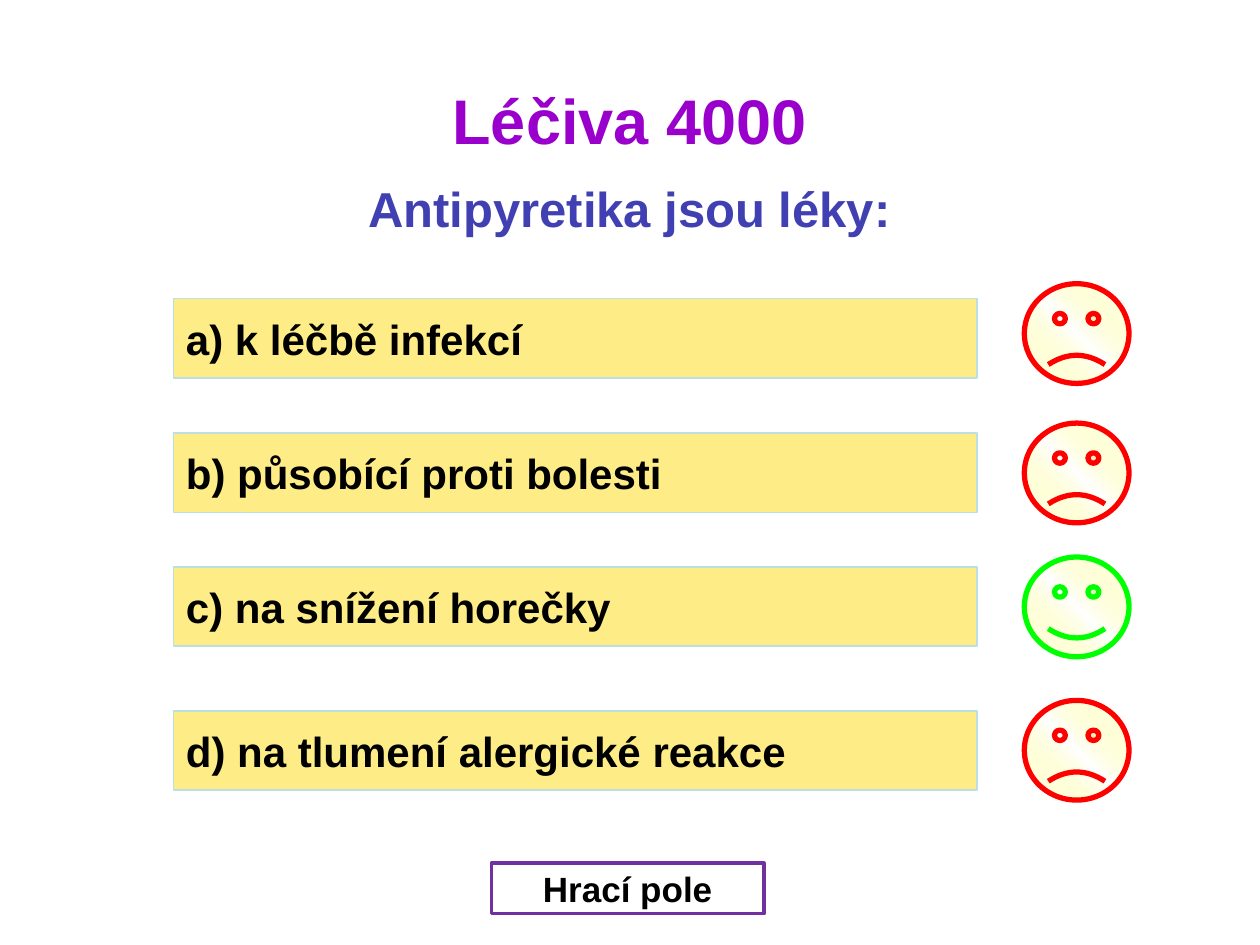
"""Build a quiz slide with four answers, each marked by a smiley."""
from lxml import etree
from pptx import Presentation
from pptx.dml.color import RGBColor
from pptx.enum.shapes import MSO_SHAPE
from pptx.enum.text import MSO_ANCHOR, PP_ALIGN
from pptx.oxml import parse_xml
from pptx.util import Cm, Pt

BUTTON = MSO_SHAPE.ACTION_BUTTON_CUSTOM
SMILEY = MSO_SHAPE.SMILEY_FACE
LEFT, CENTER = PP_ALIGN.LEFT, PP_ALIGN.CENTER
MIDDLE = MSO_ANCHOR.MIDDLE
GRADIENT = """<a:gradFill xmlns:a="http://schemas.openxmlformats.org/drawingml/2006/main" rotWithShape="1">
<a:gsLst><a:gs pos="0"><a:srgbClr val="FFFFFF"/></a:gs>
<a:gs pos="50000"><a:srgbClr val="FFFF66"><a:alpha val="0"/></a:srgbClr></a:gs>
<a:gs pos="100000"><a:srgbClr val="FFFFFF"/></a:gs></a:gsLst>
<a:lin ang="18900000" scaled="1"/></a:gradFill>"""


def rgb(value):
    return RGBColor.from_string(value)


def style(p, text, size, color, align):
    p.text = text
    p.alignment = align
    p.font.name = "Arial"
    p.font.size = Pt(size)
    p.font.bold = True
    p.font.color.rgb = rgb(color)


prs = Presentation()
prs.slide_width, prs.slide_height = Cm(25.4), Cm(19.05)
s = prs.slides.add_slide(prs.slide_layouts[6])

tf = s.shapes.add_textbox(Cm(0.99), Cm(1.52), Cm(23.4), Cm(1.9)).text_frame
tf.word_wrap = True
style(tf.paragraphs[0], "Léčiva 4000", 36, "9900CC", CENTER)
p = tf.add_paragraph()
style(p, "Antipyretika jsou léky:", 28, "4040B3", CENTER)
p.space_before = Pt(12)

buttons = [
    ("a) k léčbě infekcí", 3.5, 6.02, 16.19, 1.6, "FEED86", "BBE0E3", 1, 24, LEFT),
    ("b) působící proti bolesti", 3.5, 8.73, 16.19, 1.6, "FEED86", "BBE0E3", 1, 24, LEFT),
    ("c) na snížení horečky", 3.5, 11.43, 16.19, 1.6, "FEED86", "BBE0E3", 1, 24, LEFT),
    ("d) na tlumení alergické reakce", 3.5, 14.33, 16.19, 1.6, "FEED86", "BBE0E3", 1, 24, LEFT),
    ("Hrací pole", 9.91, 17.4, 5.49, 1.02, "FFFFFF", "7030A0", 2, 20, CENTER),
]
for text, x, y, w, h, fill, line, width, size, align in buttons:
    sp = s.shapes.add_shape(BUTTON, Cm(x), Cm(y), Cm(w), Cm(h))
    sp.shadow.inherit = False
    sp.fill.solid()
    sp.fill.fore_color.rgb = rgb(fill)
    sp.line.color.rgb = rgb(line)
    sp.line.width = Pt(width)
    tf = sp.text_frame
    tf.word_wrap = False
    tf.vertical_anchor = MIDDLE
    style(tf.paragraphs[0], text, size, "000000", align)

for y, correct in [(5.72, False), (8.53, False), (11.23, True), (14.12, False)]:
    sp = s.shapes.add_shape(SMILEY, Cm(20.65), Cm(y), Cm(2.11), Cm(2.01))
    sp.shadow.inherit = False
    sp.adjustments[0] = 0.047 if correct else -0.047
    sp.line.color.rgb = rgb("00FF00" if correct else "FF0000")
    sp.line.width = Pt(3)
    sp.fill.background()
    no_fill = sp.fill._xPr.find("{*}noFill")
    no_fill.getparent().replace(no_fill, parse_xml(GRADIENT))
    etree.cleanup_namespaces(sp.element)

prs.save("out.pptx")
